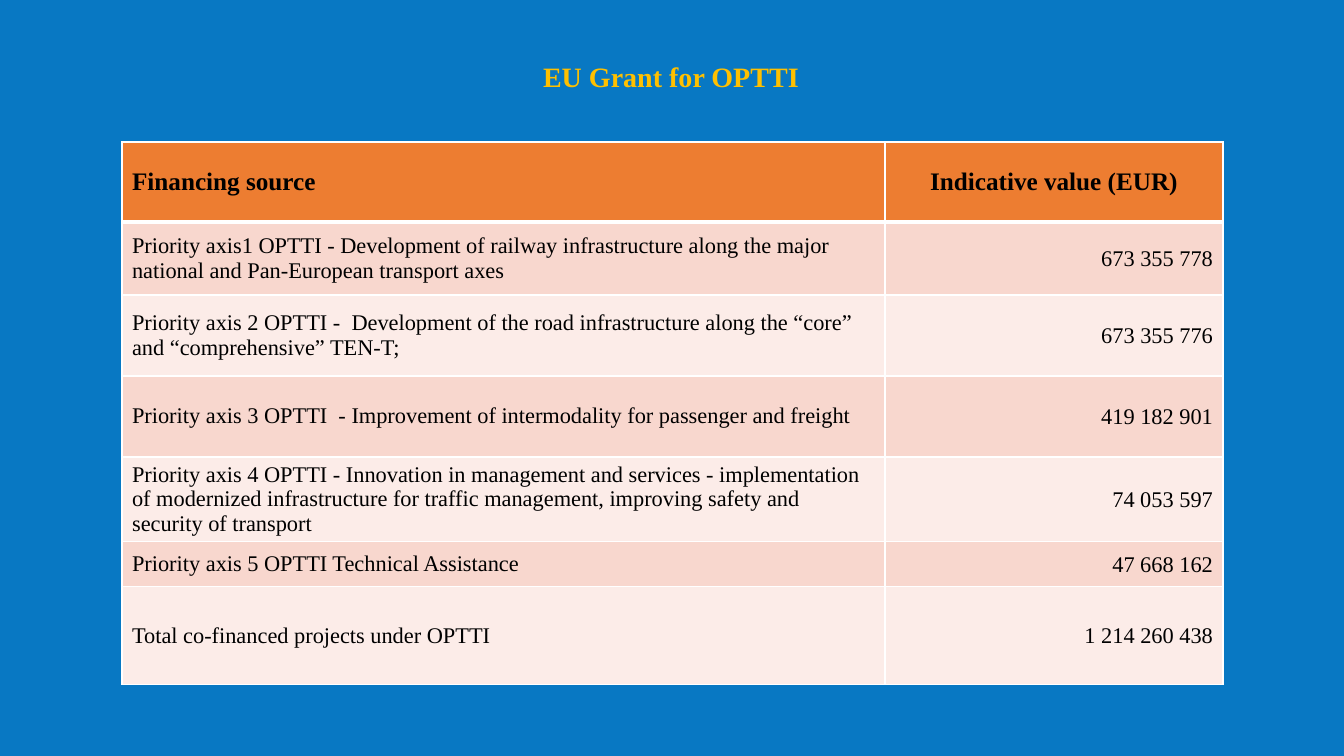
"""Build the slide on the EU grant for OPTTI by priority axis."""
from lxml import etree
from pptx import Presentation
from pptx.dml.color import RGBColor
from pptx.enum.text import MSO_ANCHOR, MSO_AUTO_SIZE, PP_ALIGN
from pptx.oxml.ns import qn
from pptx.util import Emu, Pt

LEFT, CENTER, RIGHT = PP_ALIGN.LEFT, PP_ALIGN.CENTER, PP_ALIGN.RIGHT
MIDDLE = MSO_ANCHOR.MIDDLE
GROW = MSO_AUTO_SIZE.SHAPE_TO_FIT_TEXT

BLUE = RGBColor(0x08, 0x78, 0xC3)
GOLD = RGBColor(0xFF, 0xC0, 0x00)
BLACK = RGBColor(0x00, 0x00, 0x00)
WHITE = RGBColor(0xFF, 0xFF, 0xFF)
ORANGE = RGBColor(0xED, 0x7D, 0x31)
BANDS = (RGBColor(0xFC, 0xEC, 0xE8), RGBColor(0xF8, 0xD7, 0xCE))

FONT = "Times New Roman"
PX_PER_INCH = 100.8
COLUMN_WIDTHS = (763, 338)
ROW_HEIGHTS = (80, 73, 81, 81, 84, 45, 98)
HEADINGS = ("Financing source", "Indicative value (EUR)")
GRANTS = (
    ("Priority axis1 OPTTI - Development of railway infrastructure along the "
     "major national and Pan-European transport axes", "673 355 778"),
    ("Priority axis 2 OPTTI -  Development of the road infrastructure along "
     "the “core” and “comprehensive” TEN-T;", "673 355 776"),
    ("Priority axis 3 OPTTI  - Improvement of intermodality for passenger "
     "and freight", "419 182 901"),
    ("Priority axis 4 OPTTI - Innovation in management and services - "
     "implementation of modernized infrastructure for traffic management, "
     "improving safety and security of transport", "74 053 597"),
    ("Priority axis 5 OPTTI Technical Assistance", "47 668 162"),
    ("Total co-financed projects under OPTTI", "1 214 260 438"),
)


def px(length):
    """Turn pixels into EMU."""
    return Emu(round(length * 914400 / PX_PER_INCH))


def write(paragraph, text, size, color, bold, align):
    """Add one styled run to a paragraph."""
    paragraph.alignment = align
    run = paragraph.add_run()
    run.text = text
    run.font.name = FONT
    run.font.size = Pt(size)
    run.font.bold = bold
    run.font.color.rgb = color


def add_borders(cell, top, bottom):
    """Draw white cell borders, with top and bottom widths in points."""
    properties = cell._tc.get_or_add_tcPr()
    for side, width in (("L", 1), ("R", 1), ("T", top), ("B", bottom)):
        line = etree.SubElement(properties, qn(f"a:ln{side}"), w=str(Pt(width)))
        fill = etree.SubElement(line, qn("a:solidFill"))
        etree.SubElement(fill, qn("a:srgbClr"), val=str(WHITE))


def fill_cell(cell, text, row, column):
    """Style and fill one cell by its place in the table."""
    is_heading = row == 0
    add_borders(cell, 3 if row == 1 else 1, 3 if is_heading else 1)
    cell.fill.solid()
    cell.fill.fore_color.rgb = ORANGE if is_heading else BANDS[row % 2]
    cell.vertical_anchor = MIDDLE
    paragraph = cell.text_frame.paragraphs[0]
    value_align = CENTER if is_heading else RIGHT
    if column and not is_heading:
        paragraph.line_spacing = 1.06
    write(paragraph, text, 18 if is_heading else 16, BLACK, is_heading,
          value_align if column else LEFT)


def add_grant_table(slide):
    """Add the table of grants by priority axis."""
    grants = slide.shapes.add_table(
        len(ROW_HEIGHTS), len(COLUMN_WIDTHS), px(122), px(142),
        px(sum(COLUMN_WIDTHS)), px(sum(ROW_HEIGHTS))).table
    for column, width in zip(grants.columns, COLUMN_WIDTHS):
        column.width = px(width)
    for row, height in zip(grants.rows, ROW_HEIGHTS):
        row.height = px(height)
    for row, texts in enumerate((HEADINGS, *GRANTS)):
        for column, text in enumerate(texts):
            fill_cell(grants.cell(row, column), text, row, column)


def add_title(slide, text):
    """Add the centred title above the table."""
    frame = slide.shapes.add_textbox(px(161), px(55), px(1020), px(44)).text_frame
    frame.word_wrap = True
    frame.auto_size = GROW
    paragraph = frame.paragraphs[0]
    paragraph.space_after = Pt(12)
    write(paragraph, text, 20, GOLD, True, CENTER)


def main():
    """Build and save the slide."""
    presentation = Presentation()
    presentation.slide_width = px(1344)
    presentation.slide_height = px(756)
    slide = presentation.slides.add_slide(presentation.slide_layouts[6])
    slide.background.fill.solid()
    slide.background.fill.fore_color.rgb = BLUE
    add_grant_table(slide)
    add_title(slide, "EU Grant for OPTTI")
    presentation.save("out.pptx")


if __name__ == "__main__":
    main()
